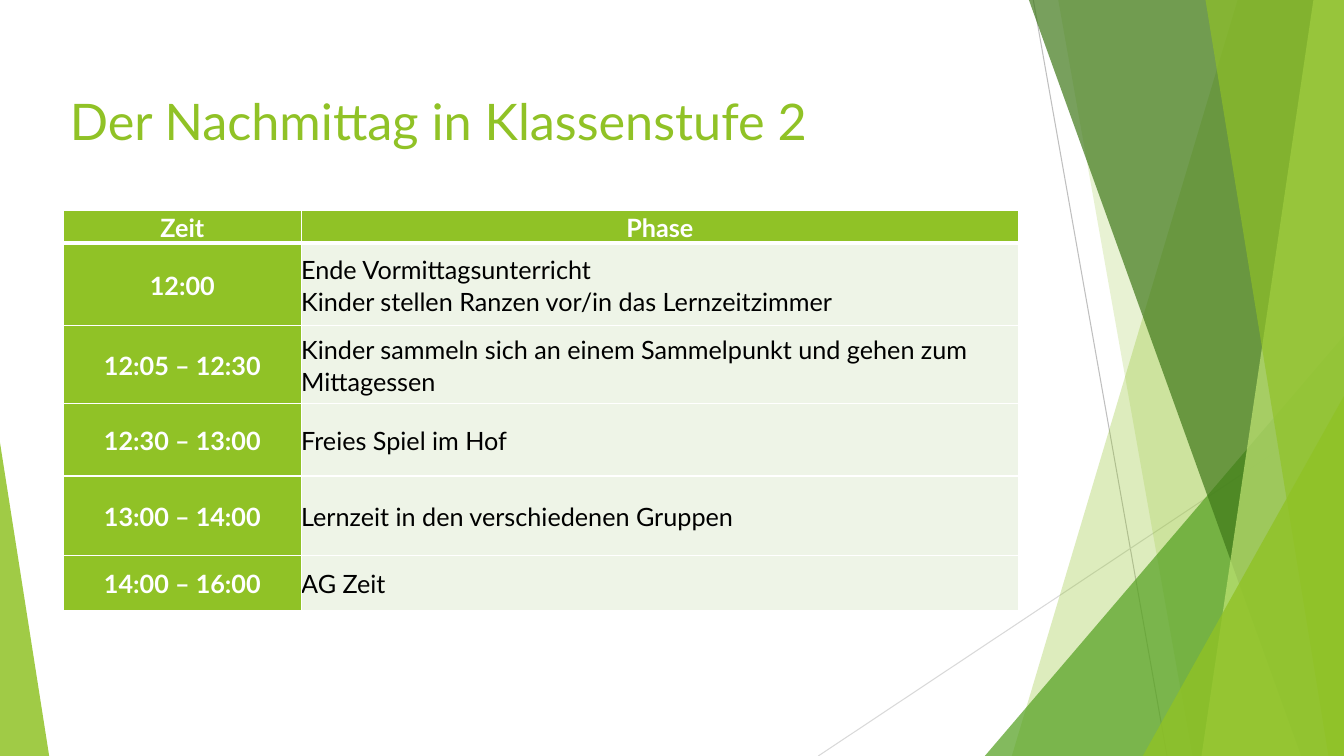
from pptx import Presentation
from pptx.dml.color import RGBColor
from pptx.enum.shapes import MSO_CONNECTOR
from pptx.enum.text import MSO_ANCHOR, PP_ALIGN
from pptx.oxml.ns import qn
from pptx.util import Cm, Pt
from lxml.etree import SubElement

COLORS = {
    "green": "90C226",
    "leaf": "54A021",
    "forest": "3F7819",
    "lime": "C0E474",
    "pale": "EEF4E7",
    "white": "FFFFFF",
    "black": "000000",
    "gray": "BFBFBF",
    "light_gray": "D9D9D9",
}
WIDTH, HEIGHT = 33.87, 19.05


def write(frame, text, size=18, color="black", bold=False, align=PP_ALIGN.LEFT,
          anchor=MSO_ANCHOR.MIDDLE, spacing=1.0, inset=0):
    frame.word_wrap = True
    frame.vertical_anchor = anchor
    frame.margin_left = frame.margin_right = Cm(inset)
    frame.margin_top = frame.margin_bottom = Cm(inset)
    paragraph = frame.paragraphs[0]
    paragraph.text = text
    paragraph.alignment = align
    paragraph.line_spacing = spacing
    for run in paragraph.runs:
        run.font.name = "Lato"
        run.font.size = Pt(size)
        run.font.bold = bold
        run.font.color.rgb = RGBColor.from_string(COLORS[color])


def add_border(cell, side, points):
    border = SubElement(cell._tc.get_or_add_tcPr(), qn(f"a:{side}"), w=str(Pt(points)))
    fill = SubElement(border, qn("a:solidFill"))
    SubElement(fill, qn("a:srgbClr"), val=COLORS["white"])


prs = Presentation()
prs.slide_width, prs.slide_height = Cm(WIDTH), Cm(HEIGHT)
slide = prs.slides.add_slide(prs.slide_layouts[5])

rays = [
    ((26.04, 0), (29.41, HEIGHT), "gray"),
    ((WIDTH, 10.24), (20.62, HEIGHT), "light_gray"),
]
for start, end, color in rays:
    ray = slide.shapes.add_connector(MSO_CONNECTOR.STRAIGHT, *map(Cm, start + end))
    ray.line.color.rgb = RGBColor.from_string(COLORS[color])
    ray.line.width = Pt(0.75)
    SubElement(ray._element.spPr, qn("a:effectLst"))

top_right, bottom_right = (WIDTH, 0), (WIDTH, HEIGHT)
facets = [
    ([(31.19, 0), top_right, bottom_right, (25.5, HEIGHT)], "green", 30),
    ([(26.67, 0), top_right, bottom_right, (30.05, HEIGHT)], "green", 20),
    ([(24.82, HEIGHT), (WIDTH, 8.46), bottom_right], "leaf", 72),
    ([(25.93, 0), top_right, bottom_right, (32.79, HEIGHT)], "forest", 70),
    ([(33.1, 0), top_right, bottom_right, (30.28, HEIGHT)], "lime", 70),
    ([(30.38, 0), top_right, bottom_right, (33.48, HEIGHT)], "green", 65),
    ([(28.8, HEIGHT), (WIDTH, 9.98), bottom_right], "green", 80),
    ([(0, HEIGHT), (0, 11.15), (1.24, HEIGHT)], "green", 85),
]
for corners, color, opacity in facets:
    points = [(Cm(x), Cm(y)) for x, y in corners]
    outline = slide.shapes.build_freeform(*points[0])
    outline.add_line_segments(points[1:])
    facet = outline.convert_to_shape()
    facet.shadow.inherit = False
    facet.line.fill.background()
    facet.fill.solid()
    facet.fill.fore_color.rgb = RGBColor.from_string(COLORS[color])
    tint = facet._element.spPr.find(qn("a:solidFill"))[0]
    SubElement(tint, qn("a:alpha"), val=str(opacity * 1000))

title = slide.shapes.title
title.left, title.top, title.width, title.height = Cm(1.63), Cm(2.13), Cm(20.04), Cm(2.31)
write(title.text_frame, "Der Nachmittag in Klassenstufe 2", size=36, color="green",
      anchor=MSO_ANCHOR.TOP, inset=0.13)

schedule = [
    ("Zeit", "Phase", 0.79),
    ("12:00", "Ende Vormittagsunterricht\vKinder stellen Ranzen vor/in das Lernzeitzimmer", 2.08),
    ("12:05 – 12:30", "Kinder sammeln sich an einem Sammelpunkt und gehen zum Mittagessen", 1.96),
    ("12:30 – 13:00", "Freies Spiel im Hof", 1.83),
    ("13:00 – 14:00", "Lernzeit in den verschiedenen Gruppen", 2.01),
    ("14:00 – 16:00", "AG Zeit", 1.37),
]
column_widths = [5.99, 18.08]
timetable = slide.shapes.add_table(
    len(schedule), 2, Cm(1.6), Cm(5.31), Cm(sum(column_widths)),
    Cm(sum(height for *_, height in schedule))).table
for column, width in zip(timetable.columns, column_widths):
    column.width = Cm(width)

for row, (time, phase, height) in enumerate(schedule):
    timetable.rows[row].height = Cm(height)
    for col, text in enumerate((time, phase)):
        cell = timetable.cell(row, col)
        is_heading = row == 0 or col == 0
        write(cell.text_frame, text, spacing=1.07, bold=is_heading,
              color="white" if is_heading else "black",
              align=PP_ALIGN.CENTER if is_heading else PP_ALIGN.LEFT)
        cell.vertical_anchor = MSO_ANCHOR.MIDDLE
        cell.margin_left = cell.margin_right = cell.margin_top = cell.margin_bottom = 0
        for side in ("lnL", "lnR", "lnT", "lnB"):
            add_border(cell, side, 3 if row == 0 and side == "lnB" else 1)
        cell.fill.solid()
        cell.fill.fore_color.rgb = RGBColor.from_string(
            COLORS["green" if is_heading else "pale"])

prs.save("out.pptx")
